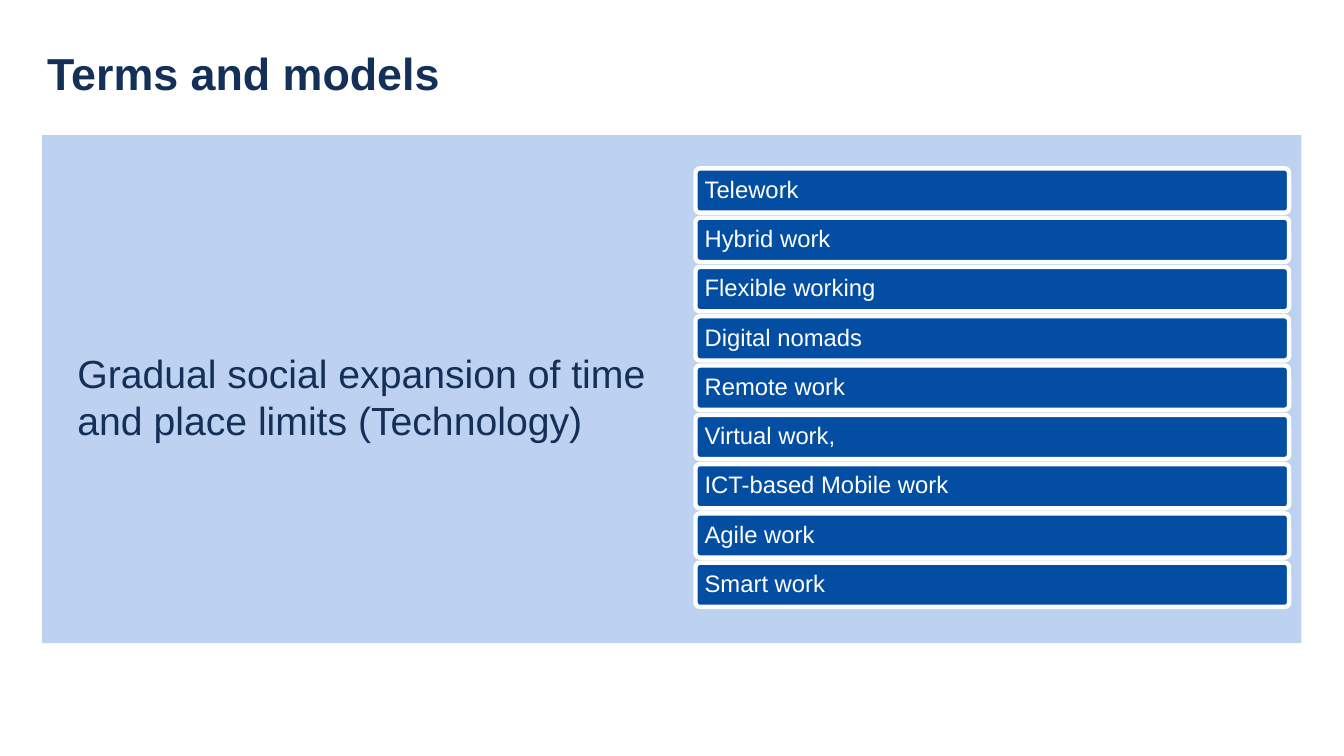
from pptx import Presentation
from pptx.dml.color import RGBColor
from pptx.enum.shapes import MSO_SHAPE
from pptx.enum.text import MSO_ANCHOR, PP_ALIGN
from pptx.util import Pt

RECT = MSO_SHAPE.RECTANGLE
ROUND = MSO_SHAPE.ROUNDED_RECTANGLE
TOP, MIDDLE = MSO_ANCHOR.TOP, MSO_ANCHOR.MIDDLE
LEFT = PP_ALIGN.LEFT

FONT = "Arial"
COLORS = {"navy": "143058", "blue": "034EA2", "pale": "BDD2F0", "white": "FFFFFF"}
TERMS = [
    "Telework", "Hybrid work", "Flexible working", "Digital nomads", "Remote work",
    "Virtual work,", "ICT-based Mobile work", "Agile work", "Smart work",
]
BAR_TOP, BAR_STEP = 120.3, 35.2


def color(name):
    return RGBColor.from_string(COLORS[name])


def add_block(slide, kind, box, fill):
    block = slide.shapes.add_shape(kind, *map(Pt, box))
    block.shadow.inherit = False
    block.fill.solid()
    block.fill.fore_color.rgb = color(fill)
    block.line.fill.background()
    return block


def write(shape, text, size, ink, anchor, bold=False):
    """Put one left-aligned paragraph into a shape and return it."""
    frame = shape.text_frame
    frame.word_wrap = True
    frame.vertical_anchor = anchor
    para = frame.paragraphs[0]
    para.alignment = LEFT
    run = para.add_run()
    run.text = text
    run.font.name = FONT
    run.font.size = Pt(size)
    run.font.bold = bold
    run.font.color.rgb = color(ink)
    return para


def add_text(slide, box, text, size, anchor, bold=False):
    label = slide.shapes.add_textbox(*map(Pt, box))
    write(label, text, size, "navy", anchor, bold)


def add_bar(slide, top, term):
    bar = add_block(slide, ROUND, (496.8, top, 424, 31.6), "blue")
    bar.adjustments[0] = 0.1
    bar.line.color.rgb = color("white")
    bar.line.width = Pt(3.15)
    frame = bar.text_frame
    frame.margin_left = frame.margin_right = Pt(5.6)
    frame.margin_top = frame.margin_bottom = Pt(5)
    para = write(bar, term, 17, "white", MIDDLE)
    para.line_spacing = 0.9
    para.space_after = Pt(6)


def main():
    deck = Presentation()
    deck.slide_width, deck.slide_height = Pt(960), Pt(540)
    slide = deck.slides.add_slide(deck.slide_layouts[6])

    add_block(slide, RECT, (30.2, 96.5, 899.5, 363), "pale")
    add_text(slide, (26.6, 21.6, 899.5, 61.2), "Terms and models", 32, MIDDLE, True)
    add_text(slide, (48.2, 246, 424, 80),
             "Gradual social expansion of time and place limits (Technology)", 28, TOP)
    for row, term in enumerate(TERMS):
        add_bar(slide, BAR_TOP + row * BAR_STEP, term)

    deck.save("out.pptx")


if __name__ == "__main__":
    main()
